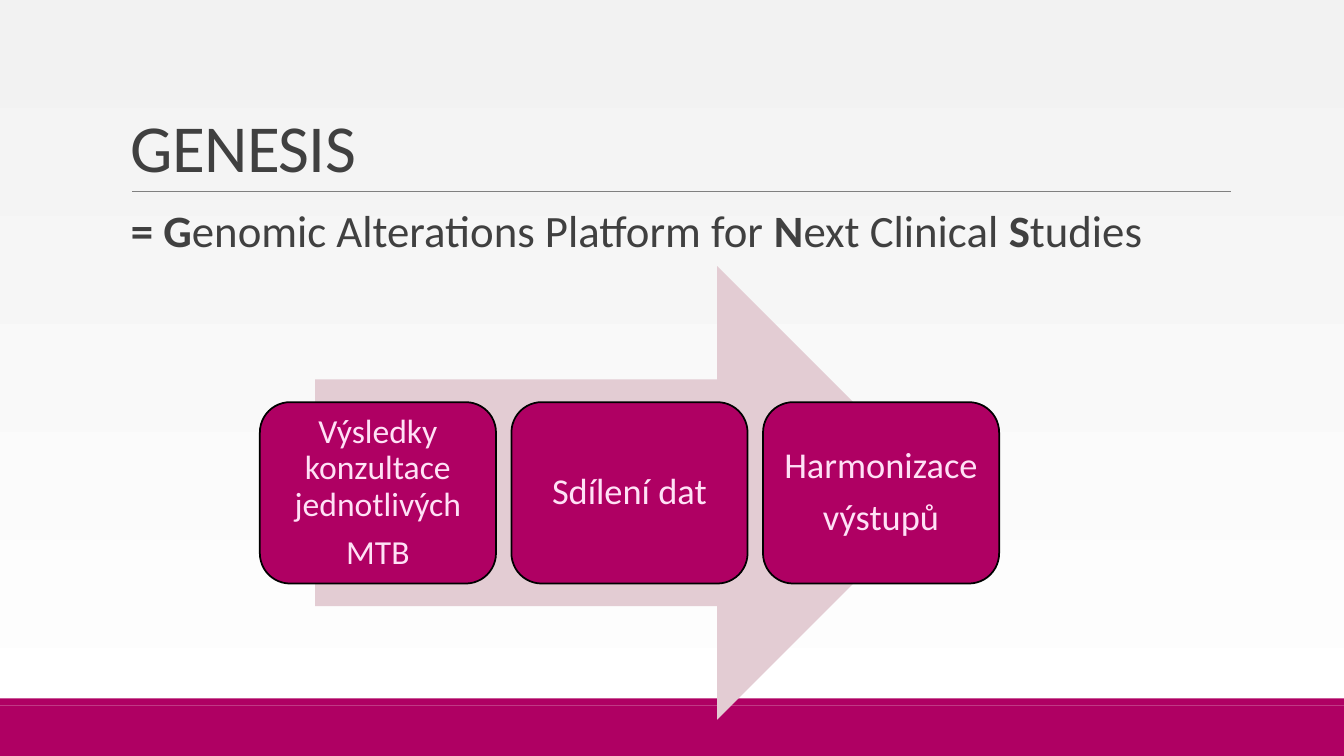
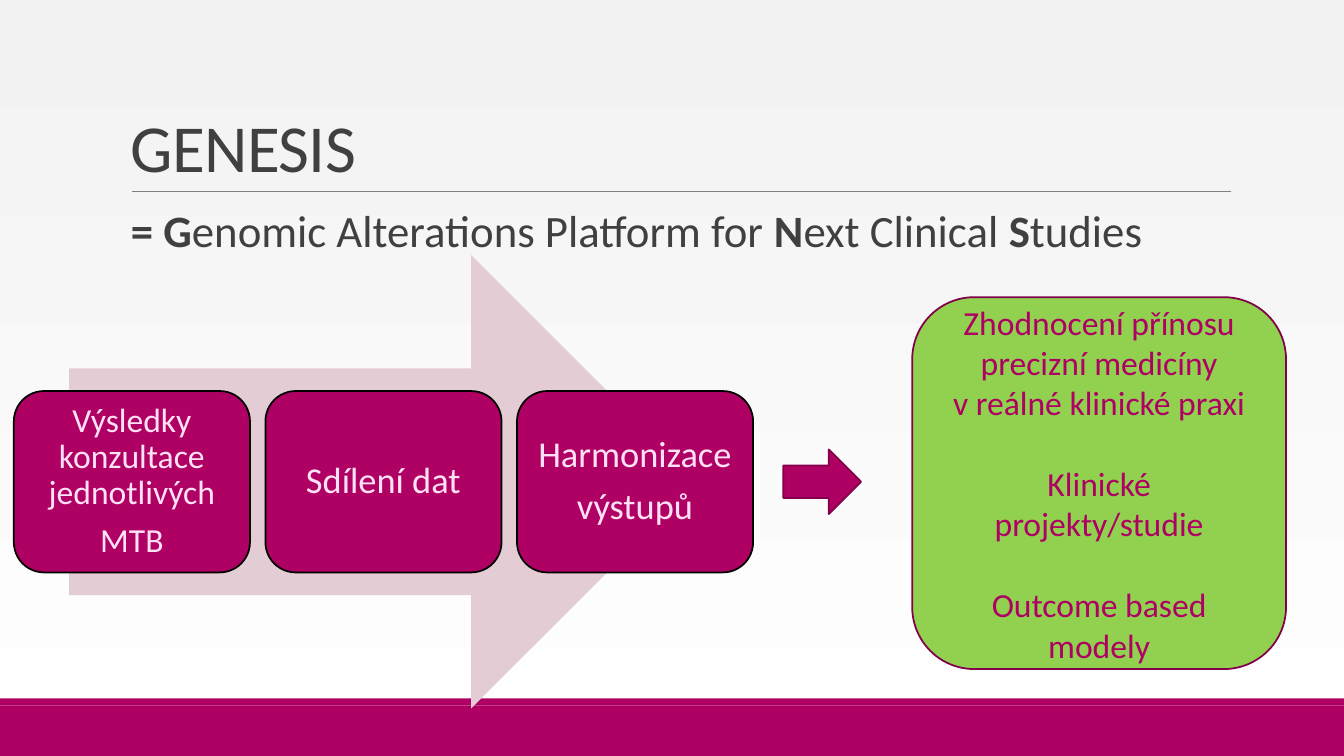
"""Builds two slides on the GENESIS platform: its process, then its outcomes."""
from dataclasses import dataclass

import pptx
import pptx.dml.color
import pptx.enum.shapes
import pptx.enum.text
import pptx.oxml
import pptx.util

Cm = pptx.util.Cm
Pt = pptx.util.Pt
SHAPE = pptx.enum.shapes.MSO_SHAPE
ALIGN = pptx.enum.text.PP_ALIGN
ANCHOR = pptx.enum.text.MSO_ANCHOR

TITLE = "GENESIS"
SUBTITLE = [
    ("= G", True), ("enomic Alterations Platform for ", False),
    ("N", True), ("ext Clinical ", False),
    ("S", True), ("tudies", False),
]
STEPS = [
    (["Výsledky konzultace jednotlivých", "MTB"], "step_small"),
    (["Sdílení dat"], "step"),
    (["Harmonizace", "výstupů"], "step"),
]
OUTCOMES = [
    ["Zhodnocení přínosu precizní medicíny", "v reálné klinické praxi"],
    ["Klinické projekty/studie"],
    ["Outcome based modely"],
]


@dataclass(frozen=True)
class Theme:
    font: str = "Calibri"
    accent: str = "AF0063"
    accent_dark: str = "810049"
    flow: str = "E3CCD3"
    step_text: str = "FFE1F6"
    step_line: str = "000000"
    outcome: str = "92D050"
    ink: str = "404040"
    rule: str = "808080"
    sky_top: str = "F2F2F2"
    sky_bottom: str = "FFFFFF"
    title: int = 48
    subtitle: int = 32
    step: int = 26
    step_small: int = 24
    outcome_size: int = 24
    outline: float = 1.25


THEME = Theme()
SLIDE_W, SLIDE_H = 33.87, 19.05
STEP_W, STEP_H, STEP_GAP = 5.95, 4.57, 0.39
FLOW_W, FLOW_H = 15.85, 11.43
STEPS_W = len(STEPS) * STEP_W + (len(STEPS) - 1) * STEP_GAP


def rgb(code):
    return pptx.dml.color.RGBColor.from_string(code)


def write(frame, paragraphs, *, size, color, align=ALIGN.LEFT, anchor=ANCHOR.TOP,
          line=1.0, after=0, gaps=(), gap=0, inset=(0.25, 0.13), tracking=0):
    frame.word_wrap = True
    frame.vertical_anchor = anchor
    frame.margin_left = frame.margin_right = Cm(inset[0])
    frame.margin_top = frame.margin_bottom = Cm(inset[1])
    for index, content in enumerate(paragraphs):
        paragraph = frame.add_paragraph() if index else frame.paragraphs[0]
        paragraph.alignment = align
        paragraph.line_spacing = line
        paragraph.space_after = Pt(after)
        paragraph.space_before = Pt(gap if index in gaps else 0)
        pieces = [(content, False)] if isinstance(content, str) else content
        for words, bold in pieces:
            run = paragraph.add_run()
            run.text = words
            run.font.name = THEME.font
            run.font.size = Pt(size)
            run.font.bold = bold
            run.font.color.rgb = rgb(color)
            if tracking:
                run.font._element.set("spc", str(tracking))


def block(slide, kind, left, top, width, height, fill, outline=None):
    shape = slide.shapes.add_shape(kind, Cm(left), Cm(top), Cm(width), Cm(height))
    shape.shadow.inherit = False
    shape.fill.solid()
    shape.fill.fore_color.rgb = rgb(fill)
    if outline:
        shape.line.color.rgb = rgb(outline)
        shape.line.width = Pt(THEME.outline)
    else:
        shape.line.fill.background()
    return shape


def paint_background(master):
    fill = master.background.fill
    fill.gradient()
    fill.gradient_angle = 270
    for stop, color in zip(fill.gradient_stops, (THEME.sky_top, THEME.sky_bottom)):
        stop.color.rgb = rgb(color)


def add_base(deck):
    slide = deck.slides.add_slide(deck.slide_layouts[6])
    for top, height in ((17.78, 1.27), (17.6, 0.18)):
        block(slide, SHAPE.RECTANGLE, 0, top, SLIDE_W, height, THEME.accent)
    rule = slide.shapes.add_connector(
        pptx.enum.shapes.MSO_CONNECTOR.STRAIGHT, Cm(3.33), Cm(4.83), Cm(31.01), Cm(4.83))
    rule.line.color.rgb = rgb(THEME.rule)
    rule.line.width = Pt(0.5)
    rule._element.spPr.append(pptx.oxml.parse_xml(
        '<a:effectLst xmlns:a="http://schemas.openxmlformats.org/drawingml/2006/main"/>'))
    heading = slide.shapes.add_textbox(Cm(3.05), Cm(0.79), Cm(27.94), Cm(4.04))
    write(heading.text_frame, [TITLE], size=THEME.title, color=THEME.ink,
          anchor=ANCHOR.BOTTOM, line=0.85, tracking=-50)
    meaning = slide.shapes.add_textbox(Cm(3.3), Cm(5.13), Cm(27.69), Cm(1.5))
    write(meaning.text_frame, [SUBTITLE], size=THEME.subtitle, color=THEME.ink,
          line=0.9, inset=(0, 0.13))
    return slide


def add_process(slide, left, middle):
    block(slide, SHAPE.RIGHT_ARROW, left + (STEPS_W - FLOW_W) / 2, middle - FLOW_H / 2,
          FLOW_W, FLOW_H, THEME.flow)
    for index, (words, size_name) in enumerate(STEPS):
        size = getattr(THEME, size_name)
        step = block(slide, SHAPE.ROUNDED_RECTANGLE, left + index * (STEP_W + STEP_GAP),
                     middle - STEP_H / 2, STEP_W, STEP_H, THEME.accent, THEME.step_line)
        write(step.text_frame, words, size=size, color=THEME.step_text,
              align=ALIGN.CENTER, anchor=ANCHOR.MIDDLE, line=0.9,
              after=round(size * 0.35, 1), inset=(0.25, 0.25))


def add_outcomes(slide, middle):
    outcome = block(slide, SHAPE.ROUNDED_RECTANGLE, 22.99, 7.49, 9.42, 9.37,
                    THEME.outcome, THEME.accent_dark)
    lines = [line for group in OUTCOMES for line in group]
    starts = [sum(map(len, OUTCOMES[:index])) for index in range(1, len(OUTCOMES))]
    write(outcome.text_frame, lines, size=THEME.outcome_size, color=THEME.accent,
          align=ALIGN.CENTER, anchor=ANCHOR.MIDDLE, gaps=starts, gap=29)
    block(slide, SHAPE.RIGHT_ARROW, 19.74, middle - 1.63 / 2, 1.96, 1.63,
          THEME.accent, THEME.accent_dark)


def main():
    deck = pptx.Presentation()
    deck.slide_width, deck.slide_height = Cm(SLIDE_W), Cm(SLIDE_H)
    paint_background(deck.slide_master)
    add_process(add_base(deck), 6.55, 12.42)
    results = add_base(deck)
    add_process(results, 0.35, 12.14)
    add_outcomes(results, 12.14)
    deck.save("out.pptx")


if __name__ == "__main__":
    main()
